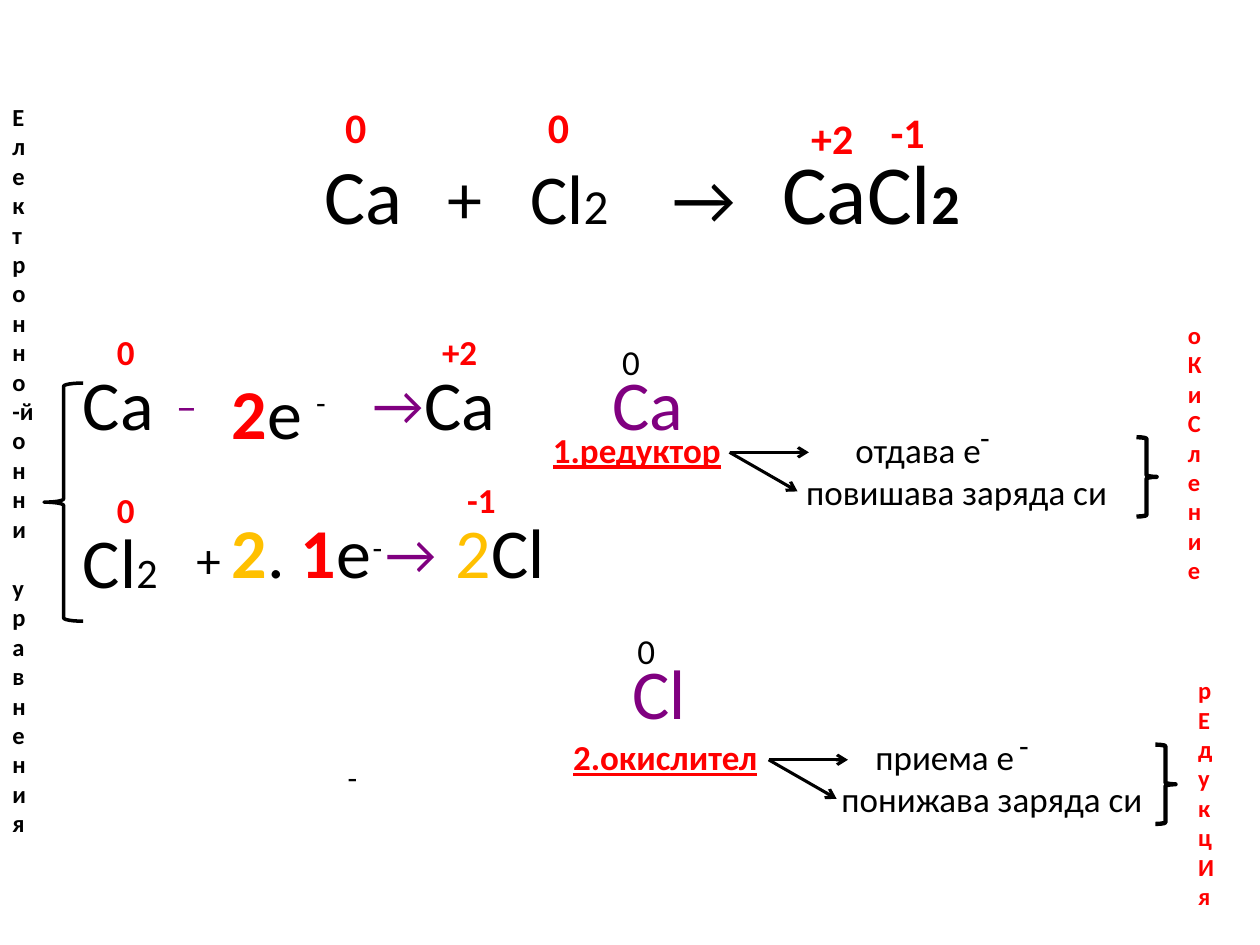
from lxml.etree import SubElement
from pptx import Presentation
from pptx.dml.color import RGBColor
from pptx.enum.shapes import MSO_CONNECTOR, MSO_SHAPE
from pptx.oxml.ns import qn
from pptx.util import Inches, Pt

BLACK = RGBColor(0, 0, 0)
RED = RGBColor(0xFF, 0, 0)
PURPLE = RGBColor(0x80, 0, 0x80)
AMBER = RGBColor(0xFF, 0xC0, 0)
FONT = "Calibri"


def style(font, size, color=BLACK, bold=False, underline=False):
    """Apply the look of one piece of text."""
    font.name, font.size, font.bold = FONT, Pt(size), bold
    font.color.rgb = color
    font.underline = underline


def text_frame(slide, left, top, width, height):
    """Add a wrapping text box and return its text frame."""
    box = slide.shapes.add_textbox(Inches(left), Inches(top), Inches(width), Inches(height))
    box.text_frame.word_wrap = True
    return box.text_frame


def label(slide, left, top, width, height, text, size, color=BLACK, bold=False):
    """Place a single-style label."""
    paragraph = text_frame(slide, left, top, width, height).paragraphs[0]
    paragraph.text = text
    style(paragraph.font, size, color, bold)


def add_runs(paragraph, pieces):
    """Append (text, size, color, bold, underline) pieces to a paragraph."""
    for text, *look in pieces:
        run = paragraph.add_run()
        run.text = text
        style(run.font, *look)


def formula(slide, left, top, width, height, pieces):
    """Place a line of mixed styles."""
    add_runs(text_frame(slide, left, top, width, height).paragraphs[0], pieces)


def set_tabs(paragraph, stops):
    """Give a paragraph left tab stops, in inches."""
    tab_list = SubElement(paragraph._p.get_or_add_pPr(), qn("a:tabLst"))
    for stop in stops:
        SubElement(tab_list, qn("a:tab"), pos=str(Inches(stop)), algn="l")


def arrow(slide, left, top, dx, dy):
    """Draw an open-headed arrow."""
    line = slide.shapes.add_connector(
        MSO_CONNECTOR.STRAIGHT, Inches(left), Inches(top), Inches(left + dx), Inches(top + dy))
    line.line.color.rgb = BLACK
    line.line.width = Pt(1.75)
    SubElement(line.line._get_or_add_ln(), qn("a:tailEnd"), type="arrow")
    SubElement(line._element.spPr, qn("a:effectLst"))


def brace(slide, kind, left, top, width, height, weight):
    """Draw a curly brace."""
    shape = slide.shapes.add_shape(kind, Inches(left), Inches(top), Inches(width), Inches(height))
    shape.shadow.inherit = False
    shape.fill.background()
    shape.line.color.rgb = BLACK
    shape.line.width = Pt(weight)


def vertical_words(slide, left, top, height, words, color):
    """Stack the letters of each word, one a line, with a line between words."""
    frame = text_frame(slide, left, top, 0.39, height)
    for word_index, word in enumerate(words):
        for index, letter in enumerate(word):
            first = word_index == index == 0
            paragraph = frame.paragraphs[0] if first else frame.add_paragraph()
            paragraph.text = letter
            if word_index and index == 0:
                paragraph.space_before = Pt(17)
            style(paragraph.font, 14, color, True)


def equation(slide, left, top):
    """Place the overall reaction with its oxidation states."""
    paragraph = text_frame(slide, left, top + 0.31, 6.77, 0.9).paragraphs[0]
    set_tabs(paragraph, (0.97, 1.63, 2.76, 3.63))
    add_runs(paragraph, (("Ca\t", 44), ("+\tCl", 40), ("2", 28), ("\t→\t", 40),
                         ("CaCl", 48), ("2", 32, BLACK, True)))
    for dx, dy, state in ((0.16, 0, "0"), (1.77, 0, "0"), (3.86, 0.08, "+2"), (4.49, 0.04, "-1")):
        label(slide, left + dx, top + dy, 0.56, 0.5, state, 24, RED, True)


def calcium_half(slide, left, top):
    """Place the half-reaction of calcium."""
    formula(slide, left + 0.13, top + 0.24, 0.9, 0.77, [("Ca", 40)])
    label(slide, left + 0.87, top + 0.39, 0.39, 0.5, "–", 24, PURPLE)
    formula(slide, left + 1.31, top + 0.31, 1, 0.77, [("2", 40, RED, True), ("e", 40)])
    label(slide, left + 1.98, top + 0.42, 0.31, 0.4, "-", 18)
    label(slide, left + 2.43, top + 0.31, 0.65, 0.63, "→", 32, PURPLE)
    label(slide, left + 2.84, top + 0.24, 0.9, 0.77, "Ca", 40)
    label(slide, left + 0.4, top, 0.36, 0.44, "0", 20, RED, True)
    label(slide, left + 2.98, top, 0.55, 0.44, "+2", 20, RED, True)


def chlorine_half(slide, left, top):
    """Place the half-reaction of chlorine."""
    formula(slide, left + 0.13, top + 0.32, 0.95, 0.77, [("Cl", 40), ("2", 24)])
    formula(slide, left + 1.03, top + 0.24, 1.81, 0.77,
            [("+ ", 28), ("2", 40, AMBER, True), (". ", 40), ("1", 40, RED, True), ("e", 40)])
    label(slide, left + 2.43, top + 0.39, 0.31, 0.4, "-", 18)
    label(slide, left + 2.53, top + 0.32, 0.65, 0.63, "→", 32, PURPLE)
    formula(slide, left + 3.09, top + 0.24, 1.1, 0.77, [("2", 40, AMBER), ("Cl", 40)])
    label(slide, left + 0.4, top + 0.08, 0.36, 0.44, "0", 20, RED, True)
    label(slide, left + 3.18, top, 0.5, 0.44, "-1", 20, RED, True)


def element(slide, left, top, symbol, state_dx):
    """Place an element symbol under its oxidation state."""
    label(slide, left, top + 0.16, 0.9, 0.77, symbol, 40, PURPLE)
    label(slide, left + state_dx, top, 0.43, 0.44, "0", 20)


def agent(slide, left, top, role, action, effect, effect_indent, minus_dx, brace_dx):
    """Place an agent's role with arrows to its action and its effect."""
    frame = text_frame(slide, left, top, 5.43, 1.11)
    role_line = frame.paragraphs[0]
    set_tabs(role_line, (1.52, 2.4))
    add_runs(role_line, ((role + "\t", 20, RED, True, True), ("\t" + action, 20)))
    effect_line = frame.add_paragraph()
    effect_line._p.get_or_add_pPr().set("marL", str(Inches(effect_indent)))
    effect_line.text = effect
    style(effect_line.font, 20)
    arrow_left = left + (1.5 if effect_indent < 2.1 else 1.65)
    for dx, dy in ((0.63, 0), (0.54, 0.31)):
        arrow(slide, arrow_left, top + 0.24, dx, dy)
    label(slide, left + minus_dx, top - 0.08, 0.31, 0.4, "-", 18)
    brace(slide, MSO_SHAPE.RIGHT_BRACE, left + brace_dx, top + 0.12, 0.16, 0.63, 2.5)


def main():
    """Build the slide on electronic equations."""
    deck = Presentation()
    deck.slide_width, deck.slide_height = Inches(10), Inches(7.5)
    slide = deck.slides.add_slide(deck.slide_layouts[6])
    equation(slide, 2.48, 0.76)
    calcium_half(slide, 0.43, 2.57)
    chlorine_half(slide, 0.43, 3.75)
    brace(slide, MSO_SHAPE.LEFT_BRACE, 0.35, 3.04, 0.31, 1.89, 2)
    element(slide, 4.76, 2.65, "Ca", 0.08)
    element(slide, 4.92, 4.95, "Cl", 0.04)
    agent(slide, 4.29, 3.35, "1.редуктор", "отдава е", "повишава заряда си", 2.01, 3.39, 4.73)
    agent(slide, 4.45, 5.79, "2.окислител", "приема е", "понижава заряда си", 2.13, 3.54, 4.72)
    label(slide, 2.66, 5.97, 0.31, 0.4, "-", 18)
    vertical_words(slide, 9.33, 2.49, 2.22, ["оКиСление"], RED)
    vertical_words(slide, 9.41, 5.31, 1.99, ["рЕдукцИя"], RED)
    electronic = [*"Електронно", "-й", *"онни"]
    vertical_words(slide, 0, 0.76, 6.46, [electronic, "уравнения"], BLACK)
    deck.save("out.pptx")


if __name__ == "__main__":
    main()
